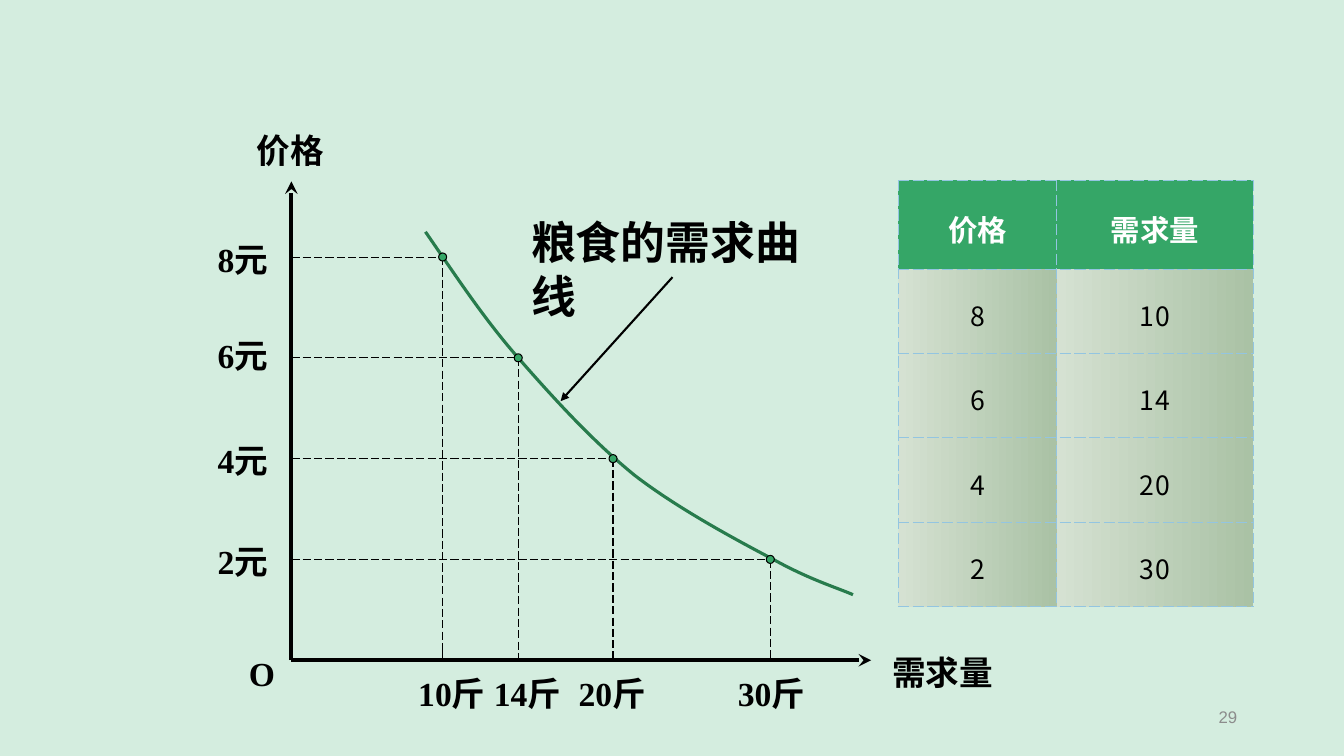
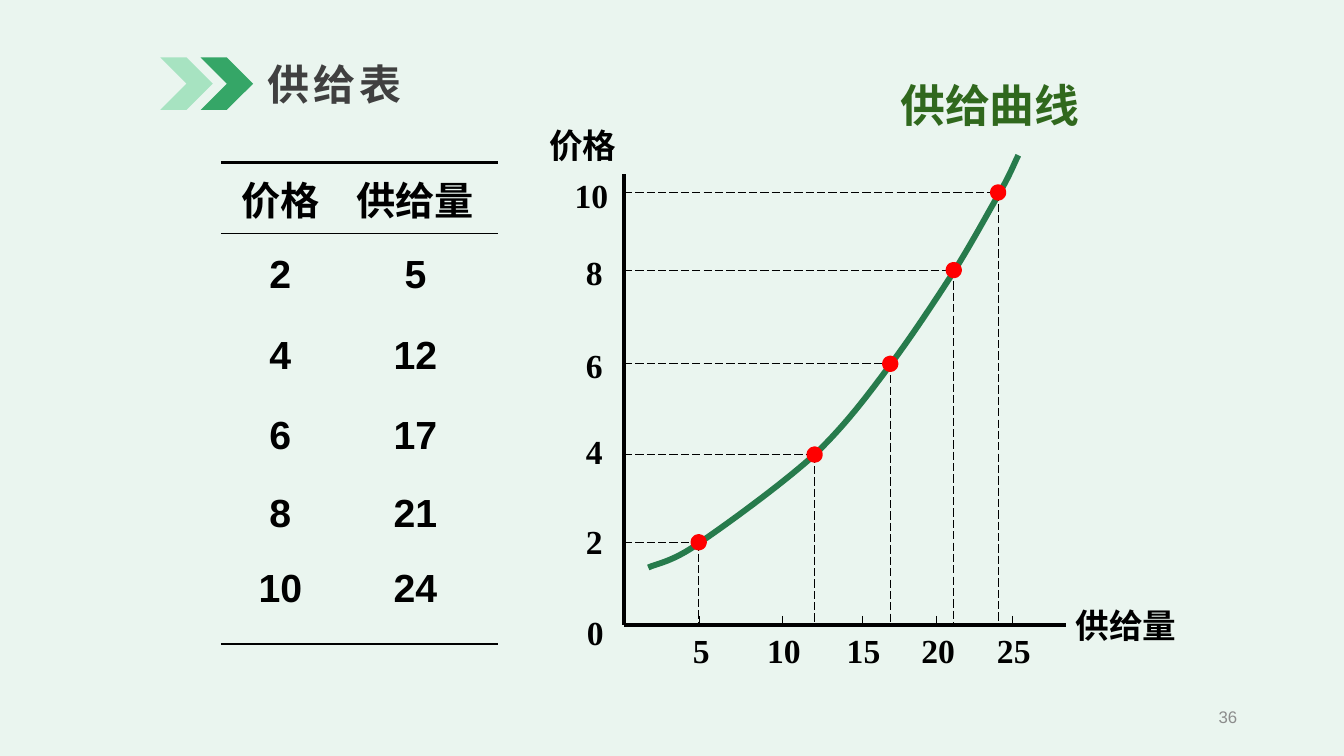
from dataclasses import dataclass
from typing import Optional, Sequence

from lxml import etree
from pptx import Presentation
from pptx import util as u
from pptx.dml.color import RGBColor
from pptx.enum import dml, shapes, text
from pptx.oxml.ns import qn

PX = 9144  # EMU per px: 100 px to the inch
Point = tuple[int, int]
Align = text.PP_ALIGN
NO_GRID = "{2D5ABB26-0587-4C30-8999-92F81FD0307C}"


# Theme
@dataclass(frozen=True)
class Style:
    size: float
    color: str = "000000"
    bold: bool = True
    latin: str = "Times New Roman"
    spacing: float = 0


@dataclass(frozen=True)
class Theme:
    demand_bg: str = "D4EDDF"
    supply_bg: str = "EAF5EF"
    ink: str = "000000"
    green: str = "35A667"
    light_green: str = "A7E3C1"
    curve: str = "277B4C"
    red: str = "FF0000"
    border: str = "93C5E1"
    cell_from: str = "D5E1D2"
    cell_to: str = "AAC2A5"
    east_asian: str = "Noto Sans CJK SC"
    label: Style = Style(24)
    title: Style = Style(30, "404040", latin="Noto Sans CJK SC", spacing=3)
    demand_name: Style = Style(32, latin="Noto Sans CJK SC")
    supply_name: Style = Style(32, "30681D")
    page: Style = Style(12, "8C8C8C", False, "Arial")
    demand_head: Style = Style(21, "FFFFFF", latin="Noto Sans CJK SC")
    demand_cell: Style = Style(19, bold=False, latin="Noto Sans CJK SC", spacing=1.3)
    supply_head: Style = Style(28)
    supply_cell: Style = Style(28, latin="Arial")


T = Theme()


# Repeated elements
@dataclass(frozen=True)
class Label:
    text: str
    left: int
    top: int
    width: int
    height: int = 50
    style: Style = T.label
    align: Align = Align.LEFT
    wrap: bool = True
    anchor: text.MSO_ANCHOR = text.MSO_ANCHOR.TOP


@dataclass(frozen=True)
class Graph:
    origin: Point
    top: int
    right: int
    points: Sequence[Point]
    x_ticks: Sequence[int]
    curve: Sequence[Point]  # start, then three Bezier points per segment
    curve_width: float
    dot_size: int
    dot_fill: str
    dot_line: str
    dot_line_width: float
    labels: Sequence[Label]
    arrow: Optional[str] = None


def px(n: float) -> u.Emu:
    return u.Emu(round(n * PX))


def rgb(value: str) -> RGBColor:
    return RGBColor.from_string(value)


# Text
def add_run(p, words: str, style: Style) -> None:
    r = p.add_run()
    r.text = words
    r.font.size = u.Pt(style.size)
    r.font.bold = style.bold
    r.font.name = style.latin
    r.font.color.rgb = rgb(style.color)
    rPr = r.font._element
    if style.spacing:
        rPr.set("spc", str(round(style.spacing * 100)))
    ea = etree.Element(qn("a:ea"), typeface=T.east_asian)
    rPr.find(qn("a:latin")).addnext(ea)


def add_label(slide, label: Label) -> None:
    box = slide.shapes.add_textbox(px(label.left), px(label.top), px(label.width), px(label.height))
    tf = box.text_frame
    tf.word_wrap = label.wrap
    tf.vertical_anchor = label.anchor
    p = tf.paragraphs[0]
    p.alignment = label.align
    add_run(p, label.text, label.style)


# Lines, dots and curves
def add_line(slide, start: Point, end: Point, width: float = 0.75,
             dashed: bool = False, arrow: Optional[str] = None) -> None:
    c = slide.shapes.add_connector(shapes.MSO_CONNECTOR.STRAIGHT, *map(px, start + end))
    c.line.color.rgb = rgb(T.ink)
    c.line.width = u.Pt(width)
    if dashed:
        c.line.dash_style = dml.MSO_LINE.LONG_DASH
    if arrow:
        etree.SubElement(c.line._get_or_add_ln(), qn("a:tailEnd"), type=arrow)
    etree.SubElement(c._element.spPr, qn("a:effectLst"))


def add_shape(slide, kind: shapes.MSO_SHAPE, left: float, top: float, size: int, fill: str):
    s = slide.shapes.add_shape(kind, px(left), px(top), px(size), px(size))
    s.shadow.inherit = False
    s.fill.solid()
    s.fill.fore_color.rgb = rgb(fill)
    s.line.fill.background()
    return s


def add_curve(slide, points: Sequence[Point], width: float) -> None:
    builder = slide.shapes.build_freeform(*points[0], scale=PX)
    builder.add_line_segments(points[1:], close=False)
    s = builder.convert_to_shape()
    s.shadow.inherit = False
    s.fill.background()
    s.line.color.rgb = rgb(T.curve)
    s.line.width = u.Pt(width)
    # Join every three straight segments into one Bezier segment
    segments = list(s._element.iter(qn("a:lnTo")))
    for i in range(0, len(segments), 3):
        bezier = etree.Element(qn("a:cubicBezTo"))
        segments[i].addprevious(bezier)
        for segment in segments[i:i + 3]:
            bezier.append(segment[0])
            segment.getparent().remove(segment)


def add_graph(slide, g: Graph) -> None:
    x0, y0 = g.origin
    add_line(slide, g.origin, (x0, g.top), 3, arrow=g.arrow)
    add_line(slide, g.origin, (g.right, y0), 3, arrow=g.arrow)
    add_curve(slide, g.curve, g.curve_width)
    for x, y in g.points:
        add_line(slide, (x0, y), (x, y), dashed=True)
        add_line(slide, (x, y), (x, y0), dashed=True)
        add_line(slide, (x0, y), (x0 + 8, y))
    for x in g.x_ticks:
        add_line(slide, (x, y0 - 9), (x, y0))
    for x, y in g.points:
        dot = add_shape(slide, shapes.MSO_SHAPE.OVAL, x - g.dot_size / 2,
                        y - g.dot_size / 2, g.dot_size, g.dot_fill)
        dot.line.color.rgb = rgb(g.dot_line)
        dot.line.width = u.Pt(g.dot_line_width)
    for label in g.labels:
        add_label(slide, label)


# Tables
def add_table(slide, left: int, top: int, cols: Sequence[int], rows: Sequence[int],
              data: Sequence[Sequence[str]], head: Style, body: Style, spacing: float = 1):
    frame = slide.shapes.add_table(len(rows), len(cols), px(left), px(top),
                                   px(sum(cols)), px(sum(rows)))
    table = frame.table
    table.horz_banding = False
    frame._element.find(".//" + qn("a:tableStyleId")).text = NO_GRID
    for col, width in zip(table.columns, cols):
        col.width = px(width)
    for i, (row, height) in enumerate(zip(table.rows, rows)):
        row.height = px(height)
        for cell, words in zip(row.cells, data[i]):
            cell.vertical_anchor = text.MSO_ANCHOR.MIDDLE
            p = cell.text_frame.paragraphs[0]
            p.alignment = Align.CENTER
            p.line_spacing = spacing
            add_run(p, words, body if i else head)
    return table


def set_margins(cell, left: int, top: int, right: int, bottom: int) -> None:
    cell.margin_left, cell.margin_top = px(left), px(top)
    cell.margin_right, cell.margin_bottom = px(right), px(bottom)


def set_borders(cell, sides: str, color: str, widths: Sequence[float], dash: str = "solid") -> None:
    """Sides are letters in the order L, R, T, B; call after the fill is set."""
    tcPr = cell._tc.get_or_add_tcPr()
    for i, (side, width) in enumerate(zip(sides, widths)):
        ln = etree.Element(qn("a:ln" + side), w=str(u.Pt(width)))
        fill = etree.SubElement(ln, qn("a:solidFill"))
        etree.SubElement(fill, qn("a:srgbClr"), val=color)
        etree.SubElement(ln, qn("a:prstDash"), val=dash)
        tcPr.insert(i, ln)


# Slide frame
def new_slide(prs, layout: int, background: str, page: str):
    slide = prs.slides.add_slide(prs.slide_layouts[layout])
    slide.background.fill.solid()
    slide.background.fill.fore_color.rgb = rgb(background)
    add_label(slide, Label(page, 942, 694, 295, 35, T.page, Align.RIGHT,
                           anchor=text.MSO_ANCHOR.MIDDLE))
    return slide


def add_title(slide, words: str) -> None:
    title = slide.shapes.title
    title.left, title.top, title.width, title.height = map(px, (257, 54, 200, 58))
    tf = title.text_frame
    tf.auto_size = text.MSO_AUTO_SIZE.NONE
    tf.vertical_anchor = text.MSO_ANCHOR.MIDDLE
    tf.margin_left = tf.margin_right = px(8)
    tf.margin_top = tf.margin_bottom = px(4)
    p = tf.paragraphs[0]
    p.alignment = Align.LEFT
    add_run(p, words, T.title)
    for left, fill in ((159, T.light_green), (199, T.green)):
        add_shape(slide, shapes.MSO_SHAPE.CHEVRON, left, 57, 52, fill)


# Slides
def demand_slide(prs) -> None:
    slide = new_slide(prs, 6, T.demand_bg, "29")
    prices = [Label(f"{n}元", 206, top, 94) for n, top in ((8, 232), (6, 327), (4, 432), (2, 532))]
    amounts = [Label(f"{n}斤", left, 663, 103)
               for n, left in ((10, 405), (14, 480), (20, 564), (30, 722))]
    add_graph(slide, Graph(
        origin=(289, 655), top=180, right=864, arrow="stealth",
        points=((439, 255), (514, 355), (608, 455), (764, 555)), x_ticks=(439, 608, 764),
        curve=((422, 230), (451, 272), (479, 315), (514, 355), (549, 395), (588, 438), (630, 472),
               (673, 505), (731, 536), (767, 555), (803, 575), (830, 583), (846, 590)),
        curve_width=2.25, dot_size=8, dot_fill=T.green, dot_line=T.ink, dot_line_width=0.75,
        labels=[Label("价格", 245, 124, 96), Label("需求量", 875, 642, 131),
                Label("O", 237, 643, 46, wrap=False), *prices, *amounts]))
    add_label(slide, Label("粮食的需求曲线", 517, 208, 310, 118, T.demand_name))
    add_line(slide, (667, 275), (556, 398), 1.5, arrow="triangle")

    data = (("价格", "需求量"), ("8", "10"), ("6", "14"), ("4", "20"), ("2", "30"))
    table = add_table(slide, 891, 179, (157, 195), (88, 84, 83, 84, 84), data,
                      T.demand_head, T.demand_cell, 1.2)
    for i, row in enumerate(table.rows):
        for cell in row.cells:
            set_margins(cell, 24, 15, 24, 15)
            if i == 0:
                cell.fill.solid()
                cell.fill.fore_color.rgb = rgb(T.green)
            else:
                cell.fill.gradient()
                cell.fill.gradient_angle = 0
                for stop, color in zip(cell.fill.gradient_stops, (T.cell_from, T.cell_to)):
                    stop.color.rgb = rgb(color)
            set_borders(cell, "LRTB", T.border, [0.75] * 4, "dash")


def supply_slide(prs) -> None:
    slide = new_slide(prs, 5, T.supply_bg, "36")
    add_title(slide, "供给表")
    x_ticks = (694, 776, 855, 929, 1004)
    prices = [Label(str(n), left, top, 53, align=Align.CENTER, wrap=False)
              for n, left, top in ((0, 564, 602), (2, 563, 512), (4, 563, 423),
                                   (6, 563, 337), (8, 563, 245), (10, 560, 169))]
    amounts = [Label(str(5 * i), x - 25, 620, 53, align=Align.CENTER, wrap=False)
               for i, x in enumerate(x_ticks, 1)]
    add_graph(slide, Graph(
        origin=(619, 620), top=173, right=1057, x_ticks=x_ticks,
        points=((693, 538), (808, 451), (883, 361), (946, 268), (990, 191)),
        curve=((643, 563), (651, 559), (666, 558), (693, 539), (721, 520), (776, 480), (808, 451),
               (839, 421), (860, 393), (883, 362), (906, 331), (929, 296), (947, 268),
               (965, 239), (980, 211), (991, 192), (1002, 173), (1006, 162), (1010, 154)),
        curve_width=4.25, dot_size=10, dot_fill=T.red, dot_line=T.red, dot_line_width=4.5,
        labels=[Label("价格", 535, 119, 110), Label("供给量", 1057, 595, 157), *prices, *amounts]))
    add_label(slide, Label("供给曲线", 883, 72, 231, 64, T.supply_name))

    data = (("价格", "供给量"), ("2", "5"), ("4", "12"), ("6", "17"), ("8", "21"), ("10", "24"))
    table = add_table(slide, 219, 161, (118, 157), (71, 81, 81, 77, 77, 91), data,
                      T.supply_head, T.supply_cell)
    last = len(data) - 1
    for i, row in enumerate(table.rows):
        for j, cell in enumerate(row.cells):
            set_margins(cell, 0, 0, 7 * j, 18 if i == last else 0)
            cell.fill.background()
            if i == 0:
                set_borders(cell, "TB", T.ink, (2.25, 0.75))
            elif i == last:
                set_borders(cell, "B", T.ink, (2.25,))


def main() -> None:
    prs = Presentation()
    prs.slide_width, prs.slide_height = px(1333), px(750)
    demand_slide(prs)
    supply_slide(prs)
    prs.save("out.pptx")


if __name__ == "__main__":
    main()
